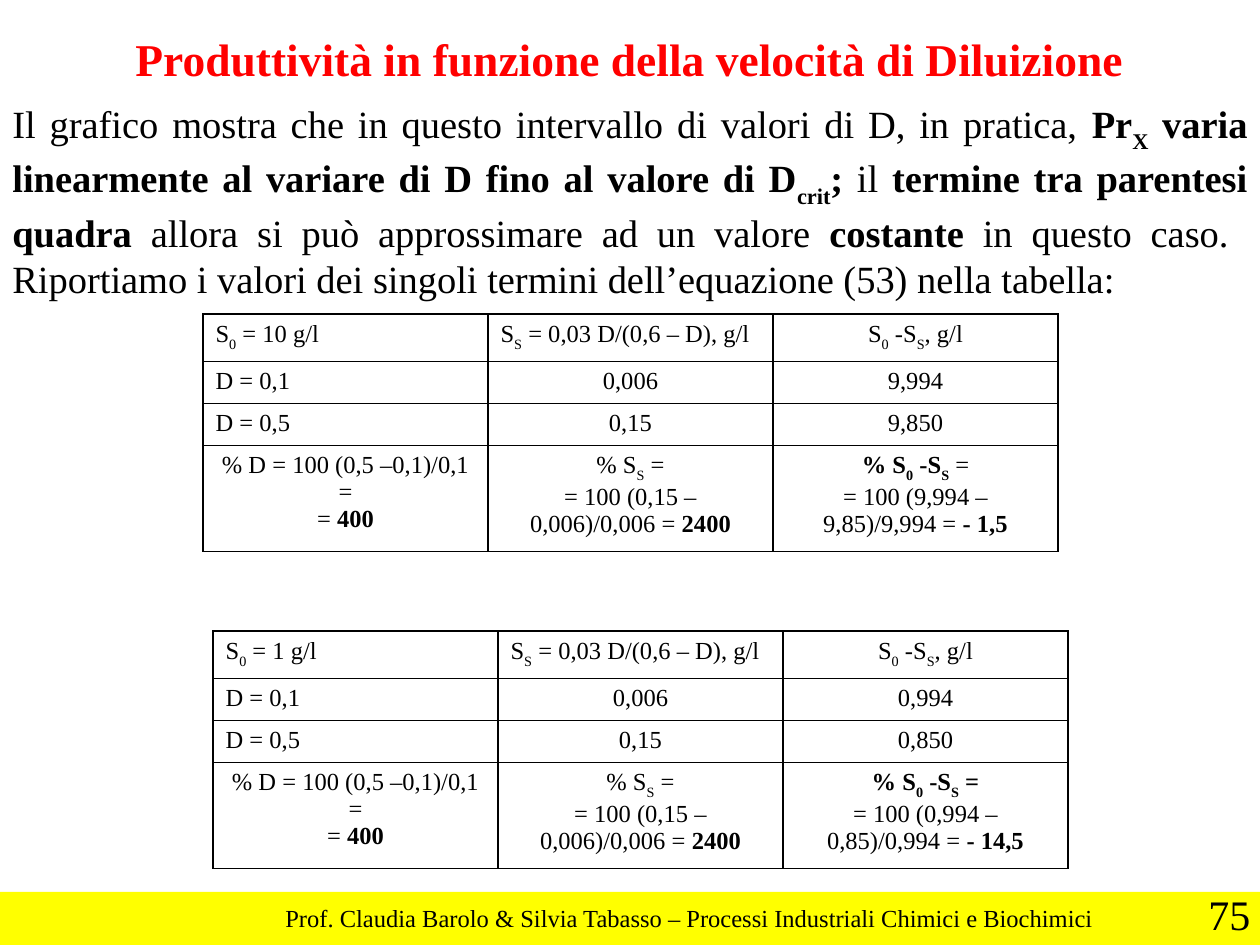
from dataclasses import dataclass
from lxml import etree
from pptx import Presentation
from pptx.dml.color import RGBColor
from pptx.enum.shapes import MSO_SHAPE
from pptx.enum.text import PP_ALIGN
from pptx.oxml.ns import qn
from pptx.util import Emu, Pt

LEFT, MID, JUST = PP_ALIGN.LEFT, PP_ALIGN.CENTER, PP_ALIGN.JUSTIFY
RECT = MSO_SHAPE.RECTANGLE


@dataclass(frozen=True)
class Theme:
    font: str = "Times New Roman"
    ink: str = "000000"
    red: str = "FF0000"
    band: str = "FFFF00"
    head: int = 26
    body: int = 22
    num: int = 24
    small: int = 14


T = Theme()
WIDE, HIGH = 1260, 945

TITLE = "Produttività in funzione della velocità di Diluizione"
BODY = (
    "Il grafico mostra che in questo intervallo di valori di D, in pratica, "
    "*Pr_X_ varia linearmente al variare di D fino al valore di D_crit_; *il"
    "* termine tra parentesi quadra *allora si può approssimare ad un valore "
    "*costante* in questo caso.  Riportiamo i valori dei singoli termini "
    "dell’equazione (53) nella tabella:"
)
FOOT = "Prof. Claudia Barolo & Silvia Tabasso – Processi Industriali Chimici e Biochimici"
PAGE = "75"

GRIDS = [
    {"at": (203, 314), "start": "10", "low": "9,994", "high": "9,850",
     "last": ["*% S_0_ -S_S_* =", "= 100 (9,994 – 9,85)/9,994 = *- 1,5*"]},
    {"at": (213, 631), "start": "1", "low": "0,994", "high": "0,850",
     "last": ["*% S_0_ -S_S_ =*", "= 100 (0,994 – 0,85)/0,994 = *- 14,5*"]},
]
COL, ROWS = 285, (47, 42, 42, 106)


def px(n):
    return Emu(round(n * 914400 / 126))


def box(*at):
    return [px(n) for n in at]


def write(para, text, size, align=LEFT, ink=T.ink):
    para.alignment = align
    for i, part in enumerate(text.split("*")):
        for j, bit in enumerate(part.split("_")):
            if not bit:
                continue
            run = para.add_run()
            run.text = bit
            look = {"name": T.font, "size": Pt(size), "bold": i % 2 == 1}
            for key, val in look.items():
                setattr(run.font, key, val)
            run.font.color.rgb = RGBColor.from_string(ink)
            if j % 2:
                run.font._element.set("baseline", "-30000")


def label(slide, at, wrap=False):
    frame = slide.shapes.add_textbox(*box(*at)).text_frame
    frame.word_wrap = wrap
    return frame


def edge(cell):
    props = cell._tc.get_or_add_tcPr()
    for side in ("lnL", "lnR", "lnT", "lnB"):
        line = etree.SubElement(props, qn("a:" + side), w=str(Pt(1)))
        fill = etree.SubElement(line, qn("a:solidFill"))
        etree.SubElement(fill, qn("a:srgbClr"), val=T.ink)
    cell.fill.background()


def cells(grid):
    return [
        [[f"S_0_ = {grid['start']} g/l"], ["S_S_ = 0,03 D/(0,6 – D), g/l"],
         ["S_0_ -S_S_, g/l"]],
        [["D = 0,1"], ["0,006"], [grid["low"]]],
        [["D = 0,5"], ["0,15"], [grid["high"]]],
        [["% D = 100 (0,5 –0,1)/0,1 =", "= *400*"],
         ["% S_S_ =", "= 100 (0,15 – 0,006)/0,006 = *2400*"], grid["last"]],
    ]


def table(slide, grid):
    at = box(*grid["at"], 3 * COL, sum(ROWS))
    tab = slide.shapes.add_table(len(ROWS), 3, *at).table
    for key in ("first_row", "horz_banding"):
        setattr(tab, key, False)
    for col in tab.columns:
        col.width = px(COL)
    for r, line in enumerate(cells(grid)):
        tab.rows[r].height = px(ROWS[r])
        for c, paras in enumerate(line):
            cell = tab.cell(r, c)
            edge(cell)
            left = (r < 3 and c == 0) or (r == 0 and c == 1)
            for k, text in enumerate(paras):
                frame = cell.text_frame
                para = frame.add_paragraph() if k else frame.paragraphs[0]
                write(para, text, T.small, LEFT if left else MID)


def main():
    deck = Presentation()
    deck.slide_width, deck.slide_height = box(WIDE, HIGH)
    slide = deck.slides.add_slide(deck.slide_layouts[6])

    band = slide.shapes.add_shape(RECT, *box(0, 892, WIDE, 53))
    band.shadow.inherit = False
    band.fill.solid()
    band.fill.fore_color.rgb = RGBColor.from_string(T.band)
    band.line.fill.background()

    write(label(slide, (273, 897, 845, 43)).paragraphs[0], FOOT, T.small)
    write(label(slide, (1196, 882, 67, 63)).paragraphs[0], PAGE, T.num)

    frame = label(slide, (0, 25, WIDE, 269), True)
    head = frame.paragraphs[0]
    write(head, f"*{TITLE}*", T.head, MID, T.red)
    head.space_after = Pt(8)
    write(frame.add_paragraph(), BODY, T.body, JUST)

    for grid in GRIDS:
        table(slide, grid)
    deck.save("out.pptx")


if __name__ == "__main__":
    main()
